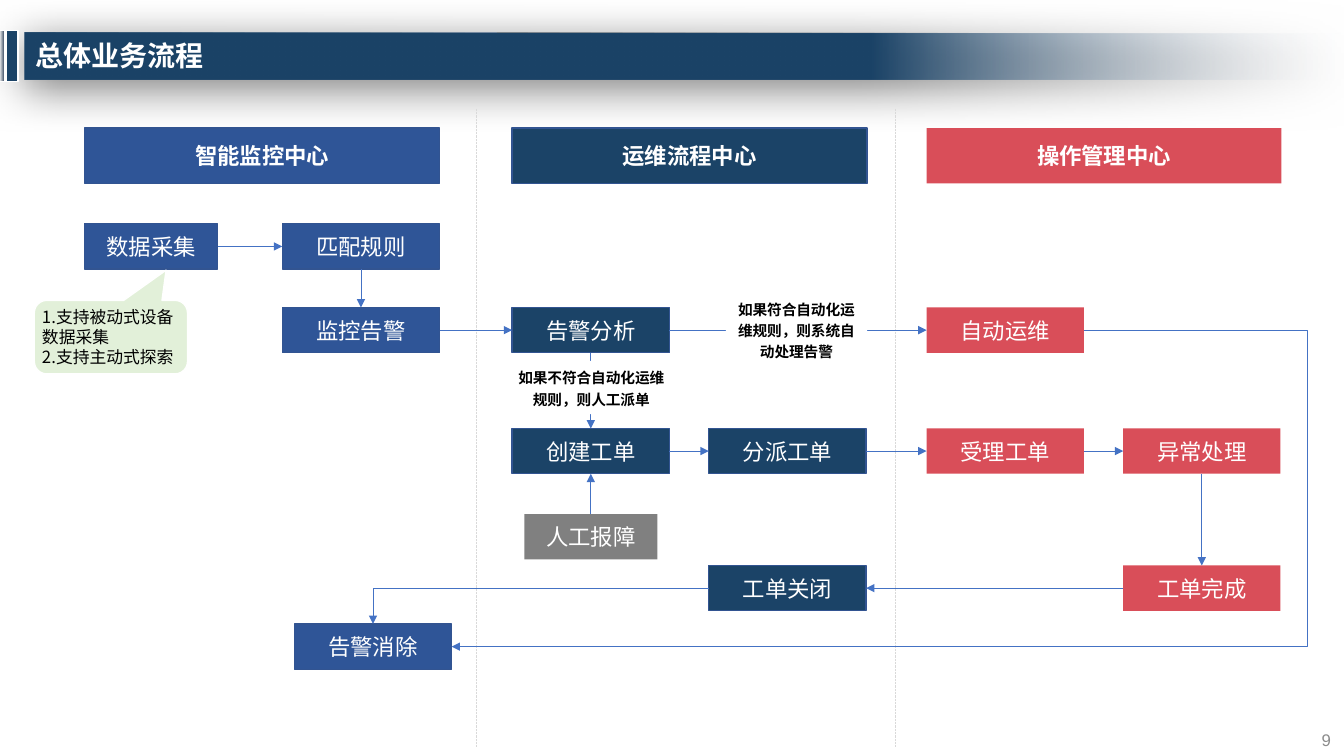
from lxml.etree import SubElement
from pptx import Presentation
from pptx.dml.color import RGBColor as RGB
from pptx.enum.dml import MSO_LINE as Dash
from pptx.enum.shapes import MSO_CONNECTOR as Conn, MSO_SHAPE as Kind
from pptx.enum.text import MSO_ANCHOR as Anchor, PP_ALIGN as Align
from pptx.oxml.ns import qn
from pptx.util import Inches, Pt

HUES = {"blue": "2F5597", "navy": "1B4367", "red": "D94E59", "gray": "808080",
        "edge": "325491", "arrow": "4472C4", "rule": "D9D9D9", "mint": "E2F0D9",
        "white": "FFFFFF", "black": "000000", "page": "8C8C8C",
        "pale": "F2F2F2", "slate": "44546A", "mist": "F6F8FC"}
HUE = {name: RGB.from_string(code) for name, code in HUES.items()}
FONT = "Noto Sans CJK SC"

deck = Presentation()
deck.slide_width, deck.slide_height = Inches(13.33), Inches(7.5)
slide = deck.slides.add_slide(deck.slide_layouts[5])
shapes = slide.shapes


def write(shape, text, size, hue, bold=False, align=Align.CENTER, gap=1.0, font=FONT):
    frame = shape.text_frame
    frame.word_wrap = True
    frame.text = text
    for para in frame.paragraphs:
        para.alignment, para.line_spacing = align, gap
        para.font.size, para.font.bold = Pt(size), bold
        para.font.name, para.font.color.rgb = font, HUE[hue]
        props = para._p.pPr.find(qn("a:defRPr"))
        SubElement(props, qn("a:ea"), typeface=font)
    return frame


def block(x, y, w, h, fill, edge=None, kind=Kind.RECTANGLE):
    shape = shapes.add_shape(kind, Inches(x), Inches(y), Inches(w), Inches(h))
    shape.shadow.inherit = False
    shape.fill.solid()
    shape.fill.fore_color.rgb = HUE[fill]
    if edge:
        shape.line.color.rgb, shape.line.width = HUE[edge], Pt(1)
    else:
        shape.line.fill.background()
    return shape


# Title band
pen = shapes.build_freeform(Inches(13.35), Inches(0.33), scale=1.0)
pen.add_line_segments([(Inches(x), Inches(y)) for x, y in
                       [(0.24, 0.32), (0.24, 0.79), (13.34, 0.79)]], close=True)
band = pen.convert_to_shape()
band.line.fill.background()
band.shadow.inherit = False
glow = SubElement(band._element.spPr.find(qn("a:effectLst")), qn("a:outerShdw"),
                  blurRad=str(Pt(31)), dist=str(Pt(6)), dir=str(97 * 60000),
                  algn="ctr", rotWithShape="0")
tint = SubElement(glow, qn("a:srgbClr"), val=HUES["black"])
SubElement(tint, qn("a:alpha"), val="50000")

# Bars at the left end of the band
strip = block(-0.01, 0.3, 0.06, 0.51, "pale", "white")
block(0.06, 0.3, 0.12, 0.51, "navy", "white")

for shape, angle, stops in [(band, 180, [(0, "mist"), (0.36, "navy")]),
                            (strip, 0, [(0.12, "pale"), (0.87, "slate")])]:
    shape.fill.gradient()
    shape.fill.gradient_angle = angle
    for stop, (place, hue) in zip(shape.fill.gradient_stops, stops):
        stop.position, stop.color.rgb = place, HUE[hue]
clear = band._element.xpath(".//a:gs[1]/a:srgbClr")[0]
SubElement(clear, qn("a:alpha"), val="0")

# Title, brought in front of the band
title = shapes.title
title.left, title.top = Inches(0.25), Inches(0.34)
title.width, title.height = Inches(12.2), Inches(0.46)
write(title, "总体业务流程", 20, "white", True, Align.LEFT, 0.9).vertical_anchor = Anchor.MIDDLE
shapes._spTree.append(title._element)

# Page number
page = shapes.add_textbox(Inches(12.65), Inches(7.17), Inches(0.68), Inches(0.34))
frame = write(page, "9", 12, "page", align=Align.RIGHT, font="Arial")
frame.vertical_anchor = Anchor.MIDDLE
frame.margin_left = frame.margin_right = Inches(0.13)
frame.margin_top = frame.margin_bottom = Inches(0.07)

# Lane dividers
for x in (4.72, 8.88):
    rule = shapes.add_connector(Conn.STRAIGHT, Inches(x), Inches(1.08), Inches(x), Inches(7.41))
    rule.line.color.rgb, rule.line.width = HUE["rule"], Pt(0.5)
    rule.line.dash_style = Dash.ROUND_DOT
    SubElement(rule._element.spPr, qn("a:effectLst"))

# Lane heads
EDGES = {"blue": "edge", "navy": "edge"}
for text, x, hue in [("智能监控中心", 0.84, "blue"), ("运维流程中心", 5.08, "navy"),
                     ("操作管理中心", 9.19, "red")]:
    write(block(x, 1.27, 3.52, 0.55, hue, EDGES.get(hue)), text, 16, "white", True)

# Steps: text, left, top, width, colour
WIDE, SLIM = 1.56, 1.32
STEPS = [
    ("数据采集", 0.84, 2.22, SLIM, "blue"), ("匹配规则", 2.8, 2.22, WIDE, "blue"),
    ("监控告警", 2.8, 3.05, WIDE, "blue"), ("告警分析", 5.08, 3.05, WIDE, "navy"),
    ("自动运维", 9.19, 3.05, WIDE, "red"), ("创建工单", 5.08, 4.25, WIDE, "navy"),
    ("分派工单", 7.03, 4.25, WIDE, "navy"), ("受理工单", 9.19, 4.25, WIDE, "red"),
    ("异常处理", 11.14, 4.25, WIDE, "red"), ("人工报障", 5.2, 5.1, SLIM, "gray"),
    ("工单关闭", 7.03, 5.61, WIDE, "navy"), ("工单完成", 11.14, 5.61, WIDE, "red"),
    ("告警消除", 2.92, 6.19, WIDE, "blue"),
]
step = {}
for text, x, y, w, hue in STEPS:
    step[text] = block(x, y, w, 0.45, hue, EDGES.get(hue))
    write(step[text], text, 16, "white")

# Arrows between the sides of the steps
TOP, LEFT, BASE, RIGHT = range(4)
FLOWS = [
    ("数据采集", RIGHT, "匹配规则", LEFT), ("匹配规则", BASE, "监控告警", TOP),
    ("监控告警", RIGHT, "告警分析", LEFT), ("告警分析", RIGHT, "自动运维", LEFT),
    ("告警分析", BASE, "创建工单", TOP), ("人工报障", TOP, "创建工单", BASE),
    ("创建工单", RIGHT, "分派工单", LEFT), ("分派工单", RIGHT, "受理工单", LEFT),
    ("受理工单", RIGHT, "异常处理", LEFT), ("异常处理", BASE, "工单完成", TOP),
    ("工单完成", LEFT, "工单关闭", RIGHT), ("工单关闭", LEFT, "告警消除", TOP),
    ("自动运维", RIGHT, "告警消除", RIGHT),
]
BENDS = {("工单关闭", "告警消除"): ("bentConnector2", None),
         ("自动运维", "告警消除"): ("bentConnector3", -35400)}
for start, out, end, into in FLOWS:
    bend = BENDS.get((start, end))
    arrow = shapes.add_connector(Conn.ELBOW if bend else Conn.STRAIGHT, 0, 0, 0, 0)
    arrow.begin_connect(step[start], out)
    arrow.end_connect(step[end], into)
    arrow.line.color.rgb, arrow.line.width = HUE["arrow"], Pt(0.5)
    SubElement(arrow.line._get_or_add_ln(), qn("a:tailEnd"), type="triangle")
    SubElement(arrow._element.spPr, qn("a:effectLst"))
    if bend:
        form, shift = bend
        geom = arrow._element.spPr.find(qn("a:prstGeom"))
        geom.set("prst", form)
        if shift:
            SubElement(geom.find(qn("a:avLst")), qn("a:gd"), name="adj1", fmla=f"val {shift}")

# Conditions on the arrows
for text, x, y, w, h in [("如果符合自动化运维规则，则系统自动处理告警", 7.2, 2.9, 1.4, 0.7),
                         ("如果不符合自动化运维规则，则人工派单", 5.02, 3.58, 1.69, 0.53)]:
    note = block(x, y, w, h, "white")
    write(note, text, 10.5, "black", True, gap=1.2).vertical_anchor = Anchor.TOP

# Callout
tip = block(0.34, 2.98, 1.52, 0.73, "mint", "white", Kind.ROUNDED_RECTANGULAR_CALLOUT)
for i, value in enumerate((0.36, -0.91, 0.17)):
    tip.adjustments[i] = value
frame = write(tip, "1.支持被动式设备数据采集\n2.支持主动式探索", 12, "black", align=Align.LEFT)
frame.margin_left, frame.margin_right = Inches(0.04), 0

deck.save("out.pptx")
